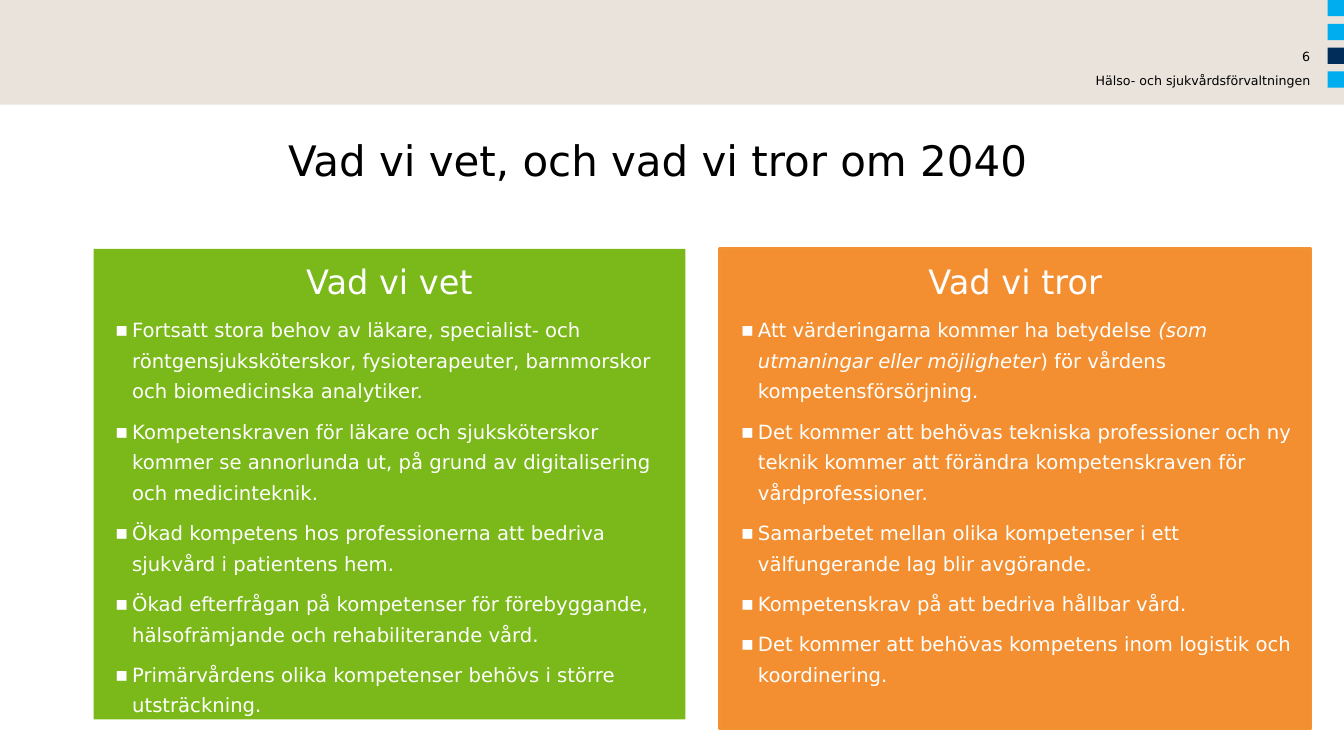
"""Build the slide comparing what is known and what is believed about 2040."""
from dataclasses import dataclass
from typing import Optional

from lxml.etree import SubElement
from pptx import Presentation
from pptx.dml.color import RGBColor as Rgb
from pptx.enum.shapes import MSO_SHAPE as Preset
from pptx.enum.text import MSO_ANCHOR as Anchor, MSO_AUTO_SIZE as AutoSize, PP_ALIGN as Align
from pptx.oxml.ns import qn
from pptx.util import Cm, Pt


@dataclass(frozen=True)
class Theme:
    """Colours and type sizes."""
    font: str = "DejaVu Sans"
    black: str = "000000"
    white: str = "FFFFFF"
    sand: str = "E9E3DC"
    sky: str = "00AEEF"
    navy: str = "002D5A"
    green: str = "7AB919"
    orange: str = "F38F31"
    orange_edge: str = "F39231"
    title: int = 30
    heading: int = 24
    body: int = 14
    small: int = 9


THEME = Theme()


@dataclass(frozen=True)
class Area:
    """A rectangle in centimetres."""
    left: float
    top: float
    width: float
    height: float

    def lengths(self) -> tuple:
        """Return the four sides as lengths."""
        return Cm(self.left), Cm(self.top), Cm(self.width), Cm(self.height)


@dataclass(frozen=True)
class Phrase:
    """A stretch of text in one style."""
    text: str
    italic: bool = False


@dataclass(frozen=True)
class Panel:
    """A coloured column with a heading and bullet points."""
    placeholder: int
    area: Area
    fill: str
    heading: str
    points: list[list[Phrase]]
    edge: Optional[str] = None


@dataclass(frozen=True)
class Label:
    """A small right-aligned line in the banner."""
    text: str
    top: float


PANELS = [
    Panel(1, Area(2.36, 6.27, 14.91, 11.86), THEME.green, "Vad vi vet", [
        [Phrase("Fortsatt stora behov av läkare, specialist- och röntgensjuksköterskor, "
                "fysioterapeuter, barnmorskor och biomedicinska analytiker.")],
        [Phrase("Kompetenskraven för läkare och sjuksköterskor kommer se annorlunda ut, "
                "på grund av digitalisering och medicinteknik.")],
        [Phrase("Ökad kompetens hos professionerna att bedriva sjukvård i patientens hem.")],
        [Phrase("Ökad efterfrågan på kompetenser för förebyggande, hälsofrämjande och "
                "rehabiliterande vård.")],
        [Phrase("Primärvårdens olika kompetenser behövs i större utsträckning.")],
    ]),
    Panel(2, Area(18.13, 6.27, 14.91, 12.1), THEME.orange, "Vad vi tror", [
        [Phrase("Att värderingarna kommer ha betydelse "),
         Phrase("(som utmaningar eller möjligheter", italic=True),
         Phrase(") för vårdens kompetensförsörjning.")],
        [Phrase("Det kommer att behövas tekniska professioner och ny teknik kommer att "
                "förändra kompetenskraven för vårdprofessioner.")],
        [Phrase("Samarbetet mellan olika kompetenser i ett välfungerande lag blir avgörande.")],
        [Phrase("Kompetenskrav på att bedriva hållbar vård.")],
        [Phrase("Det kommer att behövas kompetens inom logistik och koordinering.")],
    ], THEME.orange_edge),
]
LABELS = [Label("6", 1.24), Label("Hälso- och sjukvårdsförvaltningen", 1.83)]


def place(shape, area: Area) -> None:
    """Move and size a shape."""
    shape.left, shape.top, shape.width, shape.height = area.lengths()


def prepare(frame) -> None:
    """Strip margins and anchor wrapped text at the top."""
    frame.margin_left = frame.margin_right = frame.margin_top = frame.margin_bottom = 0
    frame.word_wrap = True
    frame.auto_size = AutoSize.NONE
    frame.vertical_anchor = Anchor.TOP


def write(paragraph, phrases: list[Phrase], size: int, colour: str, align: Align) -> None:
    """Add styled runs to a paragraph."""
    paragraph.alignment = align
    for phrase in phrases:
        run = paragraph.add_run()
        run.text = phrase.text
        run.font.name = THEME.font
        run.font.size = Pt(size)
        run.font.italic = phrase.italic
        run.font.color.rgb = Rgb.from_string(colour)


def set_bullet(paragraph, mark: str = "") -> None:
    """Give a paragraph a hanging bullet, or none."""
    properties = paragraph._p.get_or_add_pPr()
    properties.set("marL", str(Cm(0.97) if mark else 0))
    properties.set("indent", str(Cm(-0.43) if mark else 0))
    if mark:
        SubElement(properties, qn("a:buFont"), typeface=THEME.font)
        SubElement(properties, qn("a:buChar"), char=mark)
    else:
        SubElement(properties, qn("a:buNone"))


def space(paragraph, before: int) -> None:
    """Set line and paragraph spacing."""
    paragraph.line_spacing = 1.3
    paragraph.space_before = Pt(before)
    paragraph.space_after = Pt(2)


def draw_block(slide, area: Area, colour: str) -> None:
    """Draw a plain filled rectangle."""
    block = slide.shapes.add_shape(Preset.RECTANGLE, *area.lengths())
    block.shadow.inherit = False
    block.fill.solid()
    block.fill.fore_color.rgb = Rgb.from_string(colour)
    block.line.fill.background()


def draw_label(slide, label: Label) -> None:
    """Draw one banner line."""
    area = Area(23.7, label.top, 9.32, 0.36)
    frame = slide.shapes.add_textbox(*area.lengths()).text_frame
    prepare(frame)
    write(frame.paragraphs[0], [Phrase(label.text)], THEME.small, THEME.black, Align.RIGHT)


def draw_panel(slide, panel: Panel) -> None:
    """Fill a body placeholder with a heading and its points."""
    column = slide.placeholders[panel.placeholder]
    place(column, panel.area)
    column.fill.solid()
    column.fill.fore_color.rgb = Rgb.from_string(panel.fill)
    if panel.edge:
        column.line.color.rgb = Rgb.from_string(panel.edge)
        column.line.width = Pt(2)
    frame = column.text_frame
    prepare(frame)
    heading = frame.paragraphs[0]
    set_bullet(heading)
    space(heading, 0)
    write(heading, [Phrase(panel.heading)], THEME.heading, THEME.white, Align.CENTER)
    for phrases in panel.points:
        point = frame.add_paragraph()
        set_bullet(point, "▪")
        space(point, 5)
        write(point, phrases, THEME.body, THEME.white, Align.LEFT)


def main() -> None:
    """Assemble and save the slide."""
    deck = Presentation()
    deck.slide_width, deck.slide_height = Cm(33.87), Cm(19.05)
    slide = deck.slides.add_slide(deck.slide_layouts[3])
    draw_block(slide, Area(0, 0, 33.87, 2.64), THEME.sand)
    for row, colour in enumerate([THEME.sky, THEME.sky, THEME.navy, THEME.sky]):
        draw_block(slide, Area(33.46, row * 0.6, 0.41, 0.41), colour)
    for label in LABELS:
        draw_label(slide, label)
    for panel in PANELS:
        draw_panel(slide, panel)
    title = slide.shapes.title
    place(title, Area(0, 3.38, 33.17, 2.31))
    prepare(title.text_frame)
    write(title.text_frame.paragraphs[0], [Phrase("Vad vi vet, och vad vi tror om 2040")],
          THEME.title, THEME.black, Align.CENTER)
    deck.save("out.pptx")


if __name__ == "__main__":
    main()
